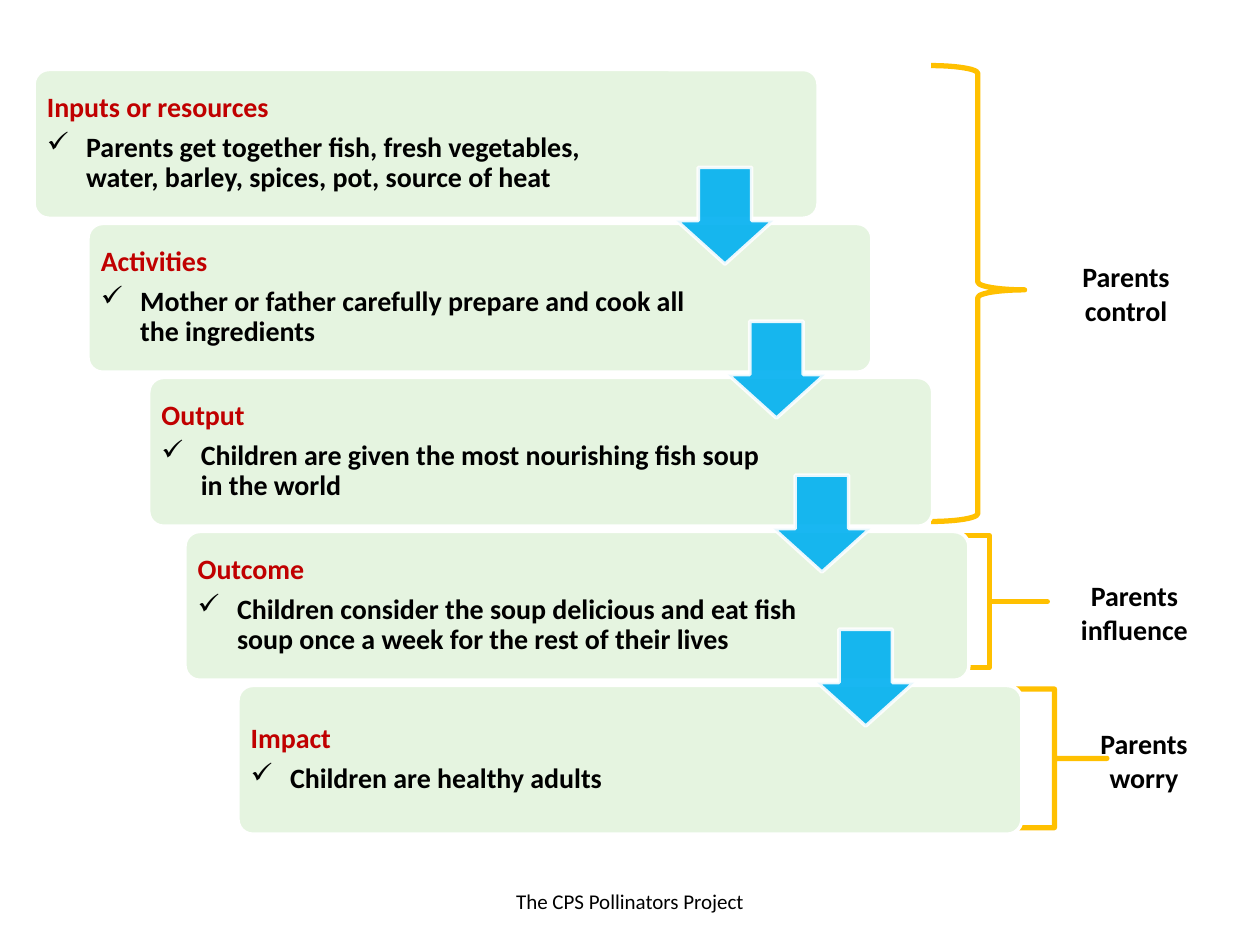
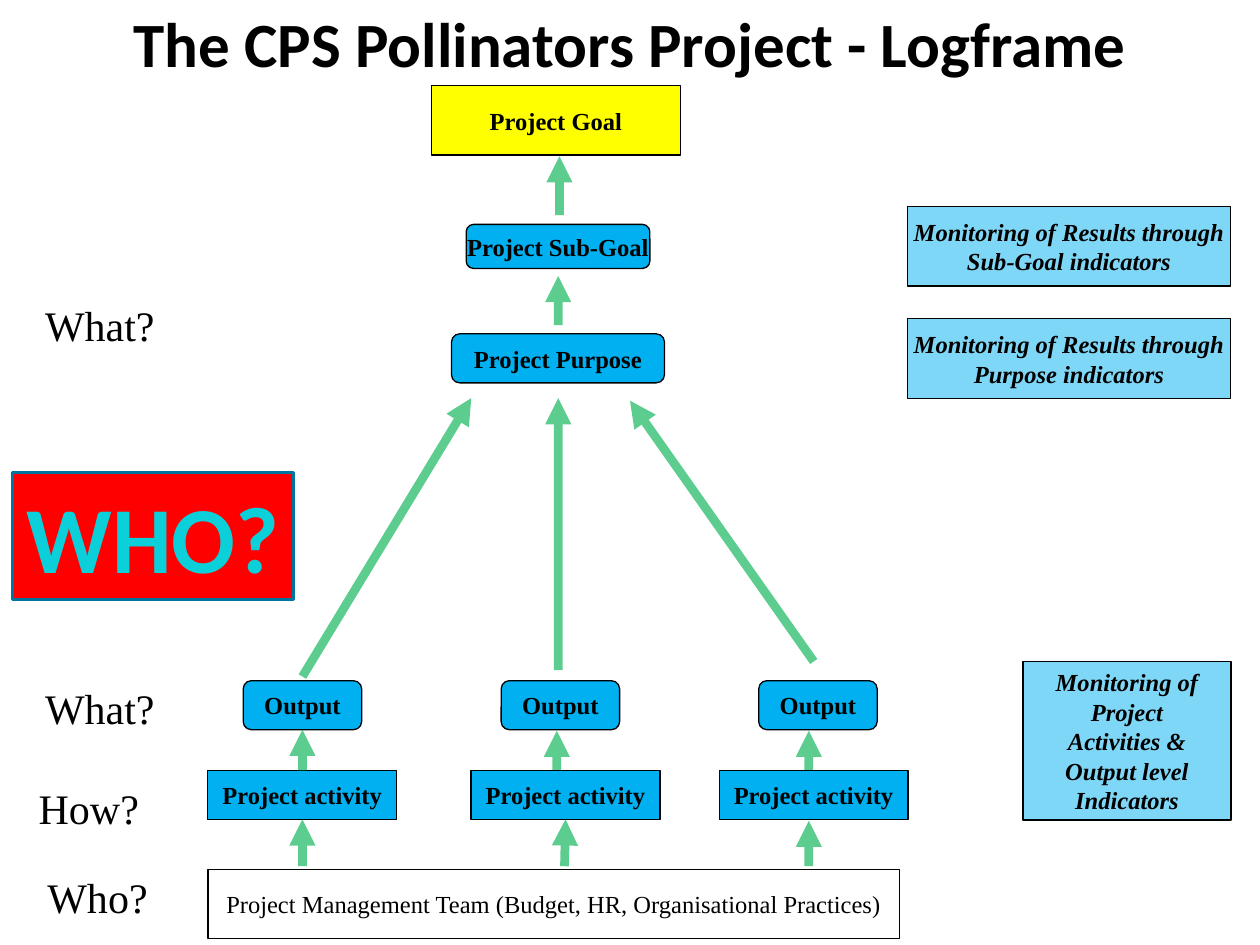
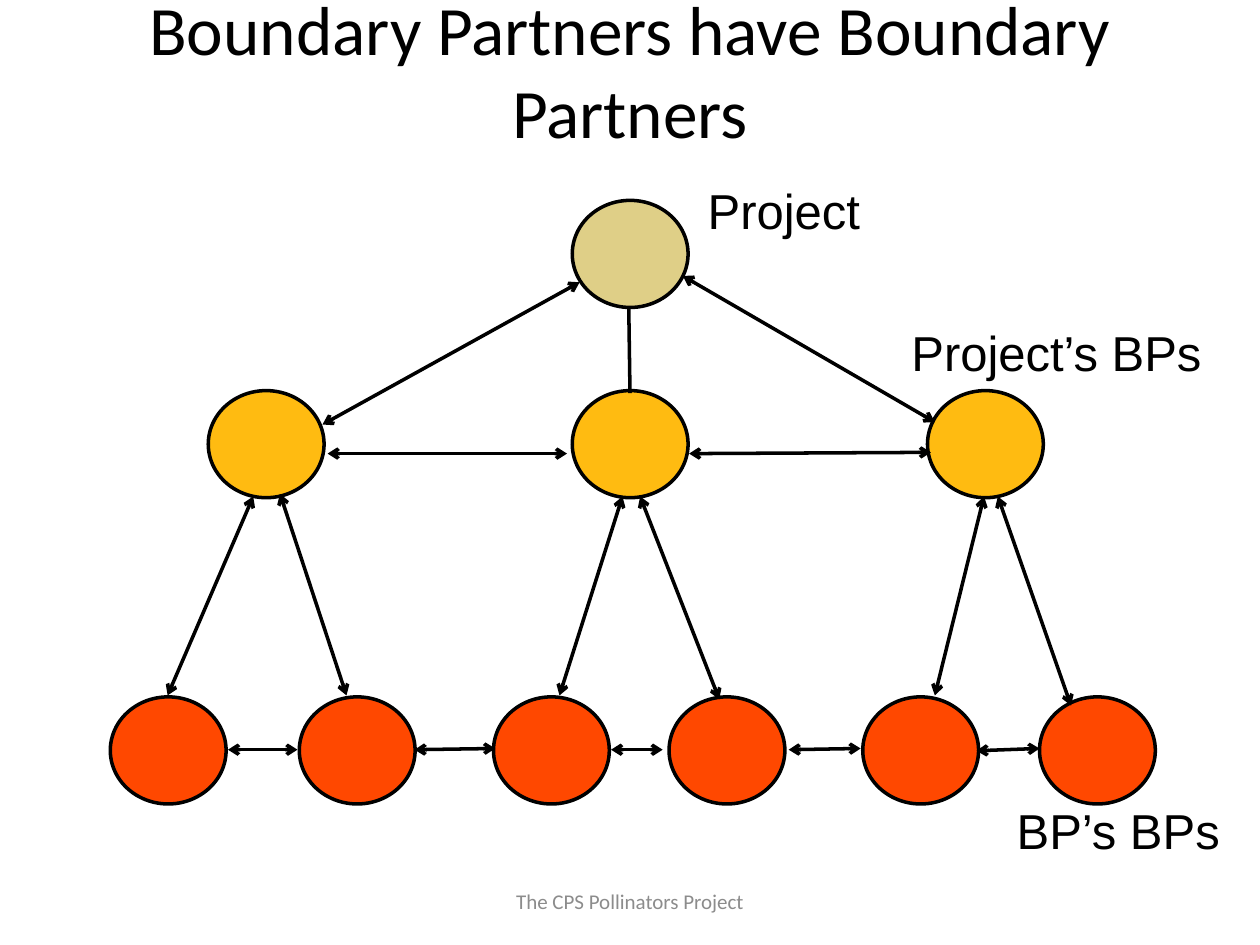
import lxml.etree
import pptx
import pptx.dml.color
import pptx.enum.shapes
import pptx.enum.text
import pptx.oxml.ns
import pptx.util

Pt = pptx.util.Pt
qn = pptx.oxml.ns.qn
SHAPE = pptx.enum.shapes.MSO_SHAPE
ALIGN = pptx.enum.text.PP_ALIGN
ANCHOR = pptx.enum.text.MSO_ANCHOR

COLORS = {
    "black": "000000", "white": "FFFFFF", "gray": "8C8C8C",
    "card": "E5F4E0", "heading": "C00000", "brace": "FFC000",
    "blue": "00B0F0", "green": "00B050", "goal": "FFFF00",
    "who_fill": "FF0000", "who_line": "0074A1", "who_text": "0BD0D9",
    "project": "BB9900", "partner": "FFBB11", "sub_partner": "FF4800",
}
BODY_FONT = "Calibri"
CHART_FONT = "Times New Roman"
FOOTER_TEXT = "The CPS Pollinators Project"


def rgb(name):
    return pptx.dml.color.RGBColor.from_string(COLORS[name])


def set_opacity(parent, percent):
    color = parent.find(qn("a:solidFill"))[0]
    lxml.etree.SubElement(color, qn("a:alpha"), val=str(percent * 1000))


def format_paragraph(paragraph, size, color="black", font=BODY_FONT, bold=False,
                     italic=False, align=ALIGN.CENTER):
    paragraph.alignment = align
    paragraph.font.size = Pt(size)
    paragraph.font.name = font
    paragraph.font.bold = bold
    paragraph.font.italic = italic
    paragraph.font.color.rgb = rgb(color)


def write_text(shape, lines, size, wrap=True, anchor=ANCHOR.MIDDLE, inset=None, **style):
    frame = shape.text_frame
    frame.text = "\n".join(lines)
    frame.word_wrap = wrap
    frame.auto_size = pptx.enum.text.MSO_AUTO_SIZE.NONE
    frame.vertical_anchor = anchor
    if inset is not None:
        frame.margin_left = frame.margin_top = Pt(inset)
        frame.margin_right = frame.margin_bottom = Pt(inset)
    for paragraph in frame.paragraphs:
        format_paragraph(paragraph, size, **style)


def add_text(slide, box, lines, size, **style):
    text_box = slide.shapes.add_textbox(*map(Pt, box))
    write_text(text_box, lines, size, **style)
    return text_box


def add_title(slide, text, box, size, bold=False):
    title = slide.shapes.title
    title.left, title.top, title.width, title.height = map(Pt, box)
    write_text(title, [text], size, bold=bold)


def add_footer(slide, color):
    add_text(slide, (246, 500.5, 228, 29), [FOOTER_TEXT], 12, color=color)


def add_shape(slide, kind, box, fill, line, line_width, adjustments=(), opacity=None):
    shape = slide.shapes.add_shape(kind, *map(Pt, box))
    shape.shadow.inherit = False
    for index, value in enumerate(adjustments):
        shape.adjustments[index] = value
    if fill:
        shape.fill.solid()
        shape.fill.fore_color.rgb = rgb(fill)
    else:
        shape.fill.background()
    shape.line.color.rgb = rgb(line)
    shape.line.width = Pt(line_width)
    if opacity:
        set_opacity(shape.element.spPr, opacity)
    return shape


def add_line(slide, start, end, color, width, head=None, tail=None, opacity=None):
    connector = slide.shapes.add_connector(
        pptx.enum.shapes.MSO_CONNECTOR.STRAIGHT, *map(Pt, start + end))
    connector.line.color.rgb = rgb(color)
    connector.line.width = Pt(width)
    properties = connector.element.spPr
    outline = properties.find(qn("a:ln"))
    if opacity:
        set_opacity(outline, opacity)
    for tag, kind in (("a:headEnd", head), ("a:tailEnd", tail)):
        if kind:
            lxml.etree.SubElement(outline, qn(tag), type=kind)
    lxml.etree.SubElement(properties, qn("a:effectLst"))
    return connector


def add_brace(slide, box, adjustments, label, label_box):
    add_shape(slide, SHAPE.RIGHT_BRACE, box, None, "brace", 3, adjustments)
    add_text(slide, label_box, [label], 16, bold=True, anchor=ANCHOR.TOP)


def add_step_card(slide, left, top, text_width, heading, detail):
    add_shape(slide, SHAPE.ROUNDED_RECTANGLE, (left, top, 448, 85), "card", "white", 2, [0.1])
    text_box = slide.shapes.add_textbox(
        *map(Pt, (left + 2.3, top + 2.4, text_width, 80)))
    write_text(text_box, [heading, detail], 16, inset=5, bold=True,
               color="heading", align=ALIGN.LEFT)
    title, bullet = text_box.text_frame.paragraphs
    for paragraph, gap in ((title, 5.6), (bullet, 2.4)):
        paragraph.line_spacing = 0.9
        paragraph.space_after = Pt(gap)
    bullet.level = 1
    properties = bullet._p.get_or_add_pPr()
    properties.set("marL", str(Pt(22.5)))
    properties.set("indent", str(-Pt(22.5)))
    mark = lxml.etree.Element(qn("a:buChar"), char="✓")
    properties.find(qn("a:defRPr")).addprevious(mark)
    bullet.font.color.rgb = rgb("black")


def add_logic_box(slide, kind, box, lines, fill="blue", bold=True, italic=False, opacity=None):
    shape = add_shape(slide, kind, box, fill, "black", 0.75, opacity=opacity)
    write_text(shape, lines, 14, wrap=False, font=CHART_FONT, bold=bold, italic=italic)
    return shape


def add_up_arrow(slide, start, end):
    return add_line(slide, start, end, "green", 5, tail="triangle", opacity=63)


def build_results_chain(slide):
    add_footer(slide, "black")
    braces = [
        ((532, 37.5, 53.5, 260.5), (0.083, 0.492), "Parents control", (592.5, 144.7, 102, 46)),
        ((532, 306, 66.5, 75.6), (0, 0.5), "Parents influence", (591, 327, 114.5, 46)),
        ((572.5, 393.8, 60, 79.2), (0, 0.5), "Parents worry", (602, 411.8, 103.5, 46)),
    ]
    for brace in braces:
        add_brace(slide, *brace)

    steps = [
        (19.5, 346, "Inputs or resources",
         "Parents get together fish, fresh vegetables, water, barley, spices, pot, source of heat"),
        (50.3, 354, "Activities",
         "Mother or father carefully prepare and cook all the ingredients"),
        (85, 354, "Output",
         "Children are given the most nourishing fish soup in the world"),
        (105.7, 354, "Outcome",
         "Children consider the soup delicious and eat fish soup once a week "
         "for the rest of their lives"),
        (136, 354, "Impact", "Children are healthy adults"),
    ]
    step_pitch = 88
    for index, (left, text_width, heading, detail) in enumerate(steps):
        add_step_card(slide, left, 39.7 + index * step_pitch, text_width, heading, detail)
    for index, left in enumerate((386.6, 416, 442, 467)):
        add_shape(slide, SHAPE.DOWN_ARROW, (left, 95.6 + index * step_pitch, 55.4, 55.4),
                  "blue", "white", 2, (0.55, 0.45), opacity=90)
        arrow = slide.shapes[-1]
        set_opacity(arrow.element.spPr.find(qn("a:ln")), 90)


def build_logframe(slide):
    add_title(slide, "The CPS Pollinators Project - Logframe", (0, -2, 720, 52), 36, bold=True)
    rectangle, rounded = SHAPE.RECTANGLE, SHAPE.ROUNDED_RECTANGLE
    add_logic_box(slide, rectangle, (246.7, 49, 142, 39.6), ["Project Goal"], fill="goal")
    add_logic_box(slide, rounded, (266.4, 128.2, 105, 25.2), ["Project Sub-Goal"])
    add_logic_box(slide, rounded, (258, 190.8, 121.7, 28), ["Project Purpose"])
    add_logic_box(slide, rectangle, (118.8, 496.8, 395.3, 39.6),
                  ["Project Management Team (Budget, HR, Organisational Practices)"],
                  fill="white", bold=False)
    outputs = [add_logic_box(slide, rounded, (left, 389, 67.7, 28), ["Output"])
               for left in (139, 286.4, 433.6)]
    activities = [add_logic_box(slide, rectangle, (left, 440.2, 108, 28), ["Project activity"])
                  for left in (118.8, 269.2, 411)]

    monitoring = [
        ((518.4, 118, 185, 45.4), ["Monitoring of Results through", "Sub-Goal indicators"]),
        ((518.4, 182.2, 185, 45.4), ["Monitoring of Results through", "Purpose indicators"]),
        ((584.6, 378, 118.8, 90.7),
         ["Monitoring of", "Project", "Activities &", "Output level", "Indicators"]),
    ]
    for box, lines in monitoring:
        add_logic_box(slide, rectangle, box, lines, italic=True, opacity=50)

    questions = [("What?", 18.7, 167.8, 78), ("What?", 18.7, 386.6, 78),
                 ("How?", 15, 443.5, 72.7), ("Who?", 20, 494.6, 72)]
    for question, left, top, width in questions:
        add_text(slide, (left, top, width, 36), [question], 24, wrap=False,
                 anchor=ANCHOR.TOP, font=CHART_FONT, align=ALIGN.LEFT)

    output_arrows = [add_up_arrow(slide, (x, 440), (x, 417.6)) for x in (172.8, 318.2, 462.2)]
    activity_arrows = [add_up_arrow(slide, (x, 495), (x, 469)) for x in (172.8, 322.6, 462.2)]
    output_arrows[0].begin_connect(activities[0], 0)
    output_arrows[0].end_connect(outputs[0], 2)
    for arrow, activity in zip(activity_arrows[:2], activities):
        arrow.end_connect(activity, 2)
    upper_arrows = [
        ((319, 185.8), (319, 157.7)), ((319.7, 123), (319.7, 89.3)),
        ((172.8, 386.6), (269.3, 227.5)), ((319, 383), (319, 227.5)),
        ((465, 378), (360, 229)),
    ]
    for start, end in upper_arrows:
        add_up_arrow(slide, start, end)

    who = add_shape(slide, rectangle, (7.2, 270, 160.6, 72.7), "who_fill", "who_line", 2)
    write_text(who, ["WHO?"], 54, wrap=False, bold=True, color="who_text")


def build_boundary_partners(slide):
    add_title(slide, "Boundary Partners have Boundary Partners", (42.5, 8, 635, 63.4), 39.6)
    add_footer(slide, "gray")
    tiers = [
        ("project", 114.5, (327,), 47),
        ("partner", 223.2, (119, 327, 530), None),
        ("sub_partner", 398.2, (63, 171, 282, 382.3, 493, 594), None),
    ]
    for color, top, lefts, opacity in tiers:
        for left in lefts:
            add_shape(slide, SHAPE.OVAL, (left, top, 66.2, 61.2), color, "black", 2,
                      opacity=opacity)

    two_way_links = [
        ((184.3, 242.6), (331.2, 161.3)), ((534.2, 241.2), (390.2, 157.7)),
        ((160, 282.2), (198, 397.4)), ((144.7, 283.7), (95.8, 397.4)),
        ((355.7, 283.7), (319.7, 397.4)), ((365.8, 283.7), (411, 399.6)),
        ((562.3, 283.7), (534.2, 397.4)), ((570.2, 283.7), (612, 403.2)),
        ((187.2, 259.2), (324, 259.2)), ((393.8, 259.2), (532, 258.5)),
        ((130.3, 428.4), (170, 428.4)), ((236.9, 428.4), (283, 427.7)),
        ((349.2, 428.4), (378.7, 428.4)), ((450.7, 428.4), (491.8, 427.7)),
        ((558, 429), (594, 427.7)),
    ]
    for start, end in two_way_links:
        add_line(slide, start, end, "black", 2, head="arrow", tail="arrow")
    add_line(slide, (359.3, 175.7), (360, 224.6), "black", 2)

    labels = [("Project", (404, 103, 87.8, 33.8)),
              ("Project’s BPs", (519.8, 184.3, 167.8, 33.8)),
              ("BP’s BPs", (580.3, 457.2, 117.4, 33.8))]
    for label, box in labels:
        add_text(slide, box, [label], 28, wrap=False, inset=0, font="Arial")


def main():
    presentation = pptx.Presentation()
    presentation.slide_width, presentation.slide_height = Pt(720), Pt(540)
    title_only, blank = presentation.slide_layouts[5], presentation.slide_layouts[6]
    build_results_chain(presentation.slides.add_slide(blank))
    build_logframe(presentation.slides.add_slide(title_only))
    build_boundary_partners(presentation.slides.add_slide(title_only))
    presentation.save("out.pptx")


if __name__ == "__main__":
    main()
